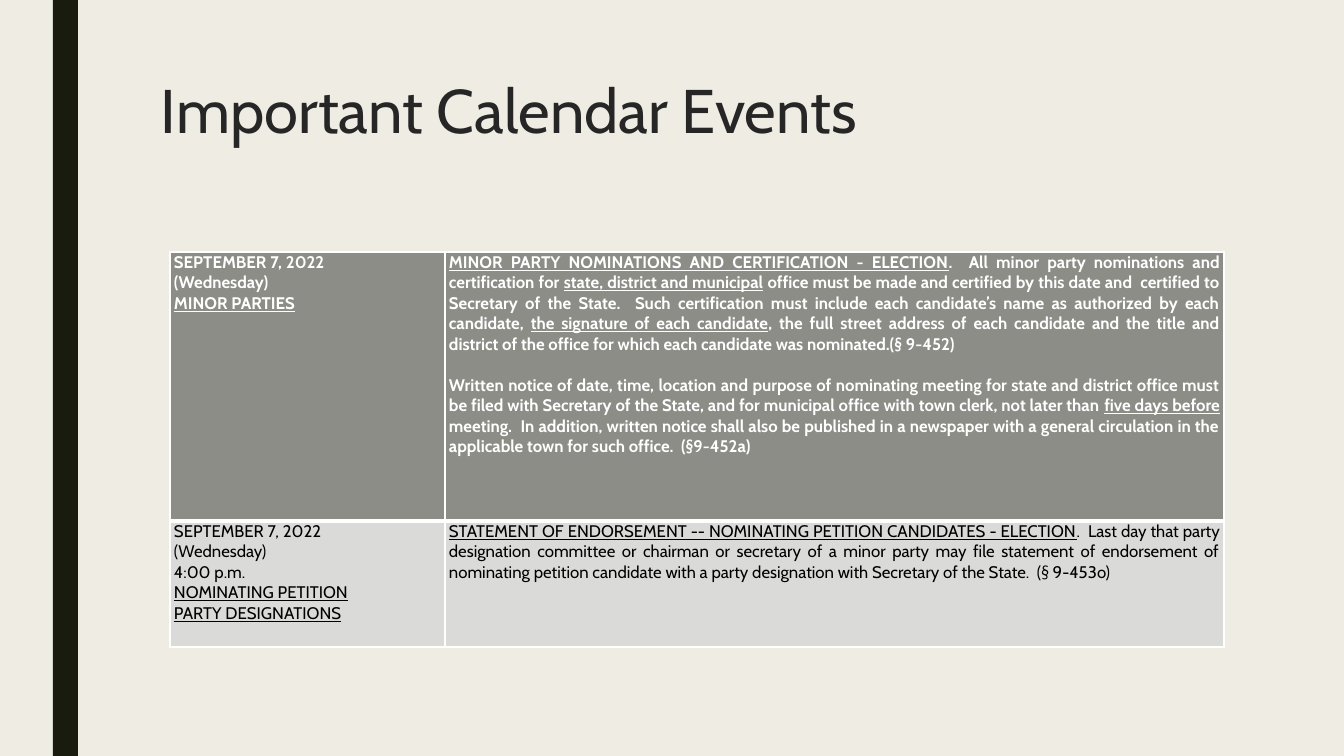
import lxml.etree
import pptx
import pptx.dml.color
import pptx.enum.shapes
import pptx.enum.text
import pptx.oxml.ns
import pptx.util

TITLE = "Important Calendar Events"

# Each cell is a list of paragraphs; text between underscores is underlined.
EVENTS = [
    (
        ["SEPTEMBER 7, 2022", "(Wednesday)", "_MINOR PARTIES_"],
        [
            "_MINOR PARTY NOMINATIONS AND CERTIFICATION - ELECTION_.  All minor party "
            "nominations and certification for _state, district and municipal_ office must be "
            "made and certified by this date and  certified to Secretary of the State.  Such "
            "certification must include each candidate’s name as authorized by each candidate, "
            "_the signature of each candidate_, the full street address of each candidate and "
            "the title and district of the office for which each candidate was nominated.(§ 9-452)",
            "Written notice of date, time, location and purpose of nominating meeting for state "
            "and district office must be filed with Secretary of the State, and for municipal "
            "office with town clerk, not later than _five days before_ meeting.  In addition, "
            "written notice shall also be published in a newspaper with a general circulation "
            "in the applicable town for such office.  (§9-452a)",
        ],
    ),
    (
        ["SEPTEMBER 7, 2022", "(Wednesday)", "4:00 p.m.",
         "_NOMINATING PETITION_", "_PARTY DESIGNATIONS_"],
        [
            "_STATEMENT OF ENDORSEMENT -- NOMINATING PETITION CANDIDATES - ELECTION_.  Last day "
            "that party designation committee or chairman or secretary of a minor party may file "
            "statement of endorsement of nominating petition candidate with a party designation "
            "with Secretary of the State.  (§ 9-453o)",
        ],
    ),
]


class Theme:
    font = "Cabin"
    background = "EFEDE3"
    bar = "191B0E"
    title = "262626"
    border = "FFFFFF"
    row_fills = ("8C8D86", "DADBD9")
    row_texts = ("FFFFFF", "000000")
    title_size = 44
    body_size = 12
    paragraph_gap = 14.6


SLIDE_SIZE = (1344, 756)
BAR_BOX = (53, 0, 25, 756)
TITLE_BOX = (151, 76, 1058, 163)
TABLE_ORIGIN = (170, 252)
COLUMN_WIDTHS = (275, 779)
ROW_HEIGHTS = (269, 126)
CELL_INSET = 4
THIN, THICK = 1, 3


def px(length):
    return pptx.util.Emu(round(length * 914400 / 100.8))


def box(lengths):
    return [px(length) for length in lengths]


def color(value):
    return pptx.dml.color.RGBColor.from_string(value)


def paint(fill, value):
    fill.solid()
    fill.fore_color.rgb = color(value)


def add_run(paragraph, text, size, text_color, bold=False, underline=False):
    run = paragraph.add_run()
    run.text = text
    run.font.name = Theme.font
    run.font.size = pptx.util.Pt(size)
    run.font.color.rgb = color(text_color)
    run.font.bold = bold
    run.font.underline = underline


def set_borders(cell, widths):
    """Draw the left, right, top and bottom borders, in that order, in points."""
    properties = cell._tc.get_or_add_tcPr()
    qn = pptx.oxml.ns.qn
    for index, (side, width) in enumerate(zip("LRTB", widths)):
        line = lxml.etree.Element(qn(f"a:ln{side}"), w=str(pptx.util.Pt(width)))
        fill = lxml.etree.SubElement(line, qn("a:solidFill"))
        lxml.etree.SubElement(fill, qn("a:srgbClr"), val=Theme.border)
        properties.insert(index, line)


def fill_cell(cell, paragraphs, row, is_description):
    paint(cell.fill, Theme.row_fills[row])
    is_header = row == 0
    set_borders(cell, (THIN, THIN, THIN if is_header else THICK, THICK if is_header else THIN))
    cell.margin_left = cell.margin_right = px(CELL_INSET)
    cell.margin_top = cell.margin_bottom = 0
    for index, text in enumerate(paragraphs):
        frame = cell.text_frame
        paragraph = frame.add_paragraph() if index else frame.paragraphs[0]
        if is_description:
            paragraph.alignment = pptx.enum.text.PP_ALIGN.JUSTIFY
            if index:
                paragraph.space_before = pptx.util.Pt(Theme.paragraph_gap)
        for part, words in enumerate(text.split("_")):
            if words:
                add_run(paragraph, words, Theme.body_size, Theme.row_texts[row],
                        bold=is_header, underline=part % 2 == 1)


def add_bar(slide):
    bar = slide.shapes.add_shape(pptx.enum.shapes.MSO_SHAPE.RECTANGLE, *box(BAR_BOX))
    bar.shadow.inherit = False
    paint(bar.fill, Theme.bar)
    bar.line.fill.background()


def add_title(slide):
    frame = slide.shapes.add_textbox(*box(TITLE_BOX)).text_frame
    frame.word_wrap = True
    frame.vertical_anchor = pptx.enum.text.MSO_ANCHOR.TOP
    paragraph = frame.paragraphs[0]
    paragraph.line_spacing = 0.89
    add_run(paragraph, TITLE, Theme.title_size, Theme.title)


def add_calendar(slide):
    size = (sum(COLUMN_WIDTHS), sum(ROW_HEIGHTS))
    table = slide.shapes.add_table(
        len(ROW_HEIGHTS), len(COLUMN_WIDTHS), *box(TABLE_ORIGIN + size)).table
    for column, width in zip(table.columns, COLUMN_WIDTHS):
        column.width = px(width)
    for row, height in zip(table.rows, ROW_HEIGHTS):
        row.height = px(height)
    for row, event in enumerate(EVENTS):
        for column, paragraphs in enumerate(event):
            fill_cell(table.cell(row, column), paragraphs, row, is_description=column == 1)


def main():
    presentation = pptx.Presentation()
    presentation.slide_width, presentation.slide_height = box(SLIDE_SIZE)
    slide = presentation.slides.add_slide(presentation.slide_layouts[6])
    paint(slide.background.fill, Theme.background)
    add_bar(slide)
    add_title(slide)
    add_calendar(slide)
    presentation.save("out.pptx")


if __name__ == "__main__":
    main()
